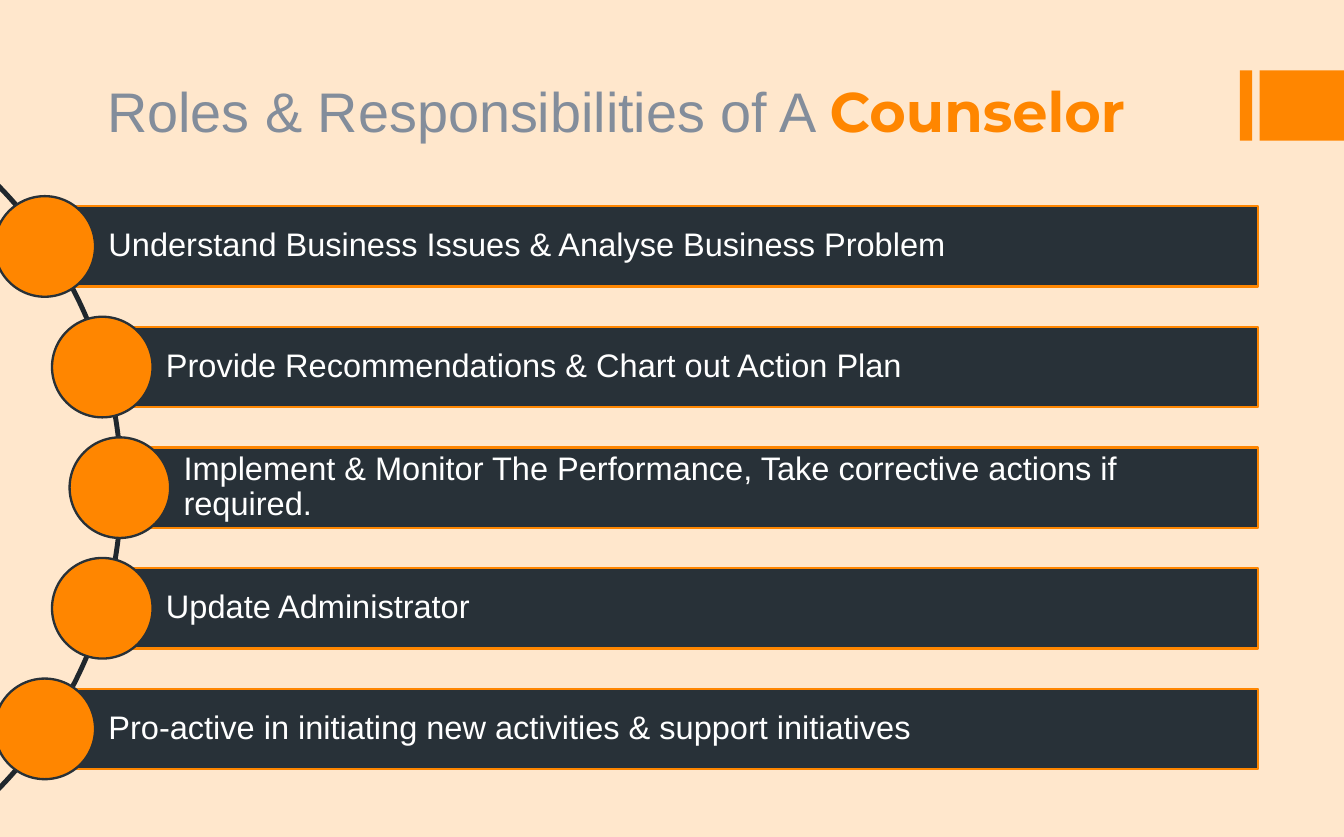
import pptx
import pptx.util
import pptx.dml.color
import pptx.enum.shapes
import pptx.enum.text

Cm, Pt = pptx.util.Cm, pptx.util.Pt
RGB = pptx.dml.color.RGBColor.from_string
MSO = pptx.enum.shapes.MSO_SHAPE
ANCHOR = pptx.enum.text.MSO_ANCHOR
ALIGN = pptx.enum.text.PP_ALIGN

COLORS = {
    "background": "FFE7CC",
    "orange": "FF8600",
    "bar": "283138",
    "arc": "20272D",
    "title": "838D9B",
    "white": "FFFFFF",
}


def add_shape(kind, left, top, width, height, fill=None, line=None):
    sp = slide.shapes.add_shape(kind, Cm(left), Cm(top), Cm(width), Cm(height))
    sp.shadow.inherit = False
    if fill:
        sp.fill.solid()
        sp.fill.fore_color.rgb = RGB(COLORS[fill])
    else:
        sp.fill.background()
    if line:
        sp.line.color.rgb = RGB(COLORS[line])
        sp.line.width = Pt(1.5)
    else:
        sp.line.fill.background()
    return sp


def add_run(p, text, color, **font):
    r = p.add_run()
    r.text = text
    r.font.color.rgb = RGB(COLORS[color])
    for name, value in font.items():
        setattr(r.font, name, value)


prs = pptx.Presentation()
prs.slide_width, prs.slide_height = Cm(30.6), Cm(19.05)
slide = prs.slides.add_slide(prs.slide_layouts[6])
slide.background.fill.solid()
slide.background.fill.fore_color.rgb = RGB(COLORS["background"])

for left, width in [(28.23, 0.28), (28.68, 1.92)]:
    add_shape(MSO.RECTANGLE, left, 1.6, width, 1.6, "orange")

tf = slide.shapes.add_textbox(Cm(1.33), Cm(1.28), Cm(25.4), Cm(2.11)).text_frame
tf.word_wrap = True
tf.vertical_anchor = ANCHOR.BOTTOM
p = tf.paragraphs[0]
p.alignment = ALIGN.CENTER
add_run(p, "Roles & Responsibilities of A ", "title", name="Arial", size=Pt(36))
add_run(p, "Counselor", "orange", name="Montserrat", size=Pt(36), bold=True)

arc = add_shape(MSO.BLOCK_ARC, -16.92, 1.24, 19.71, 19.71, line="arc")
for i, value in enumerate([189, 27, 0.003]):
    arc.adjustments[i] = value

RIGHT, FIRST_CENTER, PITCH = 28.65, 5.61, 2.745
BAR_HEIGHT, DIAMETER = 1.83, 2.29
BAR_FORMAT = {
    "word_wrap": True,
    "vertical_anchor": ANCHOR.MIDDLE,
    "margin_left": Cm(1.45),
    "margin_top": Cm(0.15),
    "margin_right": Cm(0.15),
    "margin_bottom": Cm(0.15),
}
ROLES = [
    (1.02, "Understand Business Issues & Analyse Business Problem"),
    (2.33, "Provide Recommendations & Chart out Action Plan"),
    (2.73, "Implement & Monitor The Performance, Take corrective actions if required."),
    (2.33, "Update Administrator"),
    (1.02, "Pro-active in initiating new activities & support initiatives"),
]

for i, (left, text) in enumerate(ROLES):
    center = FIRST_CENTER + i * PITCH
    bar = add_shape(MSO.RECTANGLE, left, center - BAR_HEIGHT / 2,
                    RIGHT - left, BAR_HEIGHT, "bar", "orange")
    tf = bar.text_frame
    for name, value in BAR_FORMAT.items():
        setattr(tf, name, value)
    p = tf.paragraphs[0]
    p.alignment = ALIGN.LEFT
    p.line_spacing = 0.9
    add_run(p, text, "white", name="Arial", size=Pt(21))
    add_shape(MSO.OVAL, left - DIAMETER / 2, center - DIAMETER / 2,
              DIAMETER, DIAMETER, "orange", "bar")

prs.save("out.pptx")
